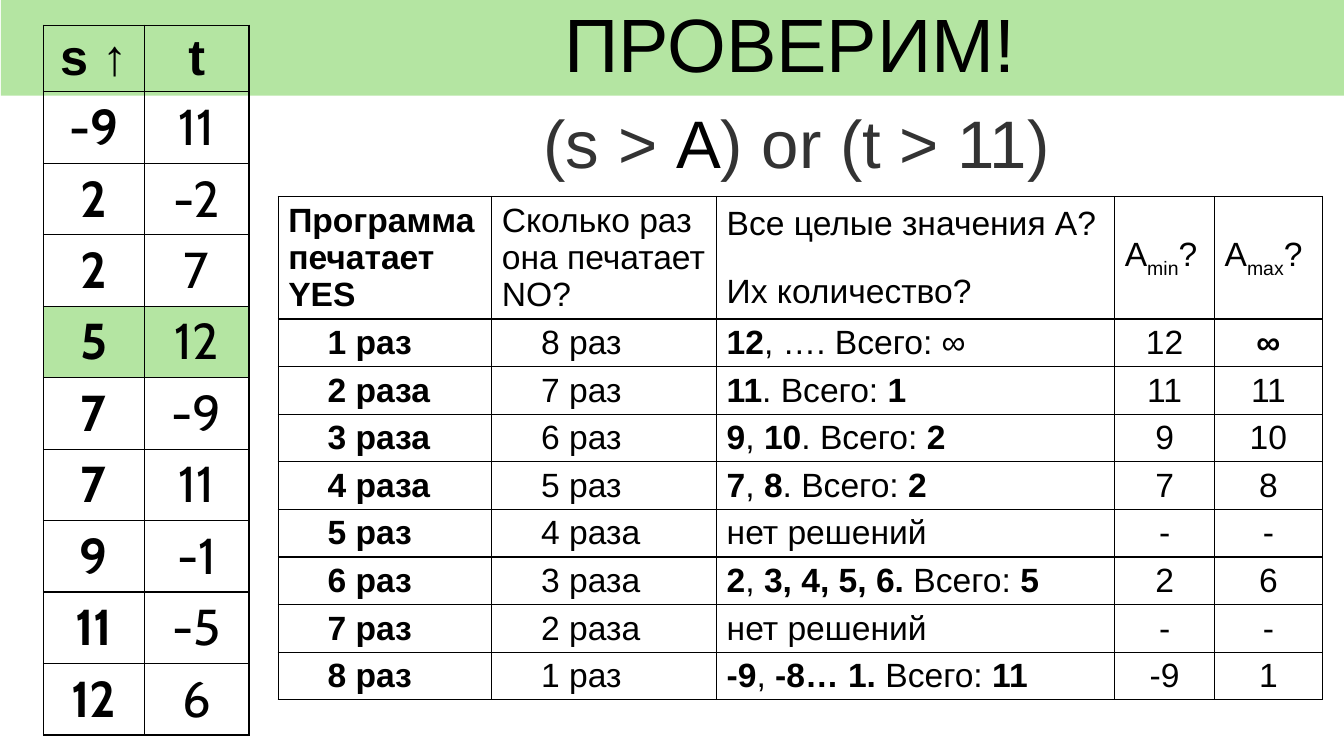
from dataclasses import dataclass
from typing import NamedTuple, Optional

from lxml.etree import SubElement
from pptx import Presentation
from pptx.dml.color import RGBColor
from pptx.enum.shapes import MSO_SHAPE as Shape
from pptx.enum.text import MSO_ANCHOR as Anchor, MSO_AUTO_SIZE as AutoSize, PP_ALIGN as Align
from pptx.oxml.ns import qn
from pptx.util import Pt

COLORS = {"green": "B4E5A2", "black": "000000", "gray": "333333"}


class Run(NamedTuple):
    text: str
    bold: bool = False
    color: str = "black"
    subscript: bool = False


@dataclass
class Cell:
    runs: list[Run]
    size: float
    font: str = "Arial"
    align: Align = Align.LEFT
    anchor: Anchor = Anchor.MIDDLE
    indent: float = 0
    fill: Optional[str] = None


@dataclass
class Grid:
    left: float
    top: float
    columns: list[float]
    rows: list[float]
    cells: list[list[Cell]]


def rgb(color: str) -> RGBColor:
    return RGBColor.from_string(COLORS[color])


def marked(text: str) -> list[Run]:
    """Split text into runs; asterisks switch bold on and off."""
    return [Run(part, bold=i % 2 == 1) for i, part in enumerate(text.split("*")) if part]


def indent(paragraph, points: float) -> None:
    properties = paragraph._p.get_or_add_pPr()
    properties.set("marL", str(int(Pt(points))))
    properties.set("indent", "0")


def add_runs(paragraph, runs: list[Run], size: float, font: str = "Arial") -> None:
    for run in runs:
        for i, line in enumerate(run.text.split("\n")):
            if i:
                paragraph.add_line_break()
            piece = paragraph.add_run()
            piece.text = line
            piece.font.size, piece.font.name, piece.font.bold = Pt(size), font, run.bold
            piece.font.color.rgb = rgb(run.color)
            if run.subscript:
                piece.font._element.set("baseline", "-25000")


def add_borders(cell) -> None:
    properties = cell._tc.get_or_add_tcPr()
    for position, side in enumerate(("lnL", "lnR", "lnT", "lnB")):
        border = SubElement(properties, qn(f"a:{side}"), w=str(int(Pt(1))))
        fill = SubElement(border, qn("a:solidFill"))
        SubElement(fill, qn("a:srgbClr"), val=COLORS["black"])
        properties.insert(position, border)


def add_grid(slide, grid: Grid) -> None:
    table = slide.shapes.add_table(
        len(grid.rows), len(grid.columns), Pt(grid.left), Pt(grid.top),
        Pt(sum(grid.columns)), Pt(sum(grid.rows))).table
    table.first_row = table.horz_banding = False
    for column, width in zip(table.columns, grid.columns):
        column.width = Pt(width)
    for row, height, contents in zip(table.rows, grid.rows, grid.cells):
        row.height = Pt(height)
        for cell, content in zip(row.cells, contents):
            cell.vertical_anchor = content.anchor
            if content.fill:
                cell.fill.solid()
                cell.fill.fore_color.rgb = rgb(content.fill)
            else:
                cell.fill.background()
            add_borders(cell)
            paragraph = cell.text_frame.paragraphs[0]
            paragraph.alignment = content.align
            indent(paragraph, content.indent)
            add_runs(paragraph, content.runs, content.size, content.font)


def add_title(slide) -> None:
    band = slide.shapes.add_shape(Shape.RECTANGLE, Pt(0.72), 0, Pt(960), Pt(68.4))
    band.shadow.inherit = False
    band.fill.solid()
    band.fill.fore_color.rgb = rgb("green")
    band.line.fill.background()
    band.text_frame.word_wrap = True
    band.text_frame.vertical_anchor = Anchor.MIDDLE
    title = band.text_frame.paragraphs[0]
    title.alignment = Align.LEFT
    title.line_spacing = 0.9
    indent(title, 395.3)
    add_runs(title, [Run("ПРОВЕРИМ!")], 54)


def add_condition(slide) -> None:
    frame = slide.shapes.add_textbox(Pt(328.3), Pt(68.4), Pt(481.7), Pt(65.5)).text_frame
    frame.word_wrap = True
    frame.auto_size = AutoSize.SHAPE_TO_FIT_TEXT
    frame.vertical_anchor = Anchor.MIDDLE
    condition = frame.paragraphs[0]
    condition.alignment = Align.CENTER
    condition.space_after = Pt(12)
    add_runs(condition, [Run("(s > ", color="gray"), Run("A"),
                         Run(") or (t > 11)", color="gray")], 48)


# Input pairs, sorted by s
PAIRS = [(-9, 11), (2, -2), (2, 7), (5, 12), (7, -9), (7, 11), (9, -1), (11, -5), (12, 6)]


def pair_cell(text: str, bold: bool, font: str, fill: Optional[str] = None) -> Cell:
    return Cell([Run(text, bold)], 36, font, Align.CENTER, fill=fill)


def pairs_grid() -> Grid:
    cells = [[pair_cell(name, True, "Arial") for name in ("s ↑ ", "t")]]
    for s, t in PAIRS:
        fill = "green" if t > 11 else None
        cells.append([pair_cell(str(s), True, "Cabin", fill),
                      pair_cell(str(t), False, "Cabin", fill)])
    return Grid(31, 18, [72, 74.9], [45.4] * len(cells), cells)


# Answers: YES count, NO count, values of A, minimum, maximum
HEADINGS = [
    marked("*Программа печатает\nYES*"),
    marked("Сколько раз она печатает NO?"),
    marked("Все целые значения А? \nИх количество?"),
    *([Run("А"), Run(limit, subscript=True), Run("?")] for limit in ("min", "max")),
]
ANSWERS = [
    ("1 раз", "8 раз", "*12*, …. Всего: ∞", "12", "*∞*"),
    ("2 раза", "7 раз", "*11*. Всего: *1*", "11", "11"),
    ("3 раза", "6 раз", "*9*, *10*. Всего: *2*", "9", "10"),
    ("4 раза", "5 раз", "*7*, *8*. Всего: *2*", "7", "8"),
    ("5 раз", "4 раза", "нет решений", "-", "-"),
    ("6 раз", "3 раза", "*2*, *3, 4, 5, 6.* Всего: *5*", "2", "6"),
    ("7 раз", "2 раза", "нет решений", "-", "-"),
    ("8 раз", "1 раз", "*-9*, *-8… 1.* Всего: *11*", "-9", "1"),
]


def answers_grid() -> Grid:
    cells = [[Cell(heading, 24) for heading in HEADINGS]]
    for yes, no, values, low, high in ANSWERS:
        counts = [Cell(marked(text), 24, anchor=Anchor.TOP, indent=28.1)
                  for text in (f"*{yes}*", no)]
        limits = [Cell(marked(text), 24, align=Align.CENTER, anchor=Anchor.TOP)
                  for text in (low, high)]
        cells.append([*counts, Cell(marked(values), 24, anchor=Anchor.TOP), *limits])
    return Grid(198.7, 140.4, [152.6, 160.6, 284.4, 71.3, 77],
                [78.5] + [29.5] * len(ANSWERS), cells)


def main() -> None:
    deck = Presentation()
    deck.slide_width, deck.slide_height = Pt(960), Pt(540)
    slide = deck.slides.add_slide(deck.slide_layouts[6])
    add_title(slide)
    add_grid(slide, pairs_grid())
    add_grid(slide, answers_grid())
    add_condition(slide)
    deck.save("out.pptx")


if __name__ == "__main__":
    main()
